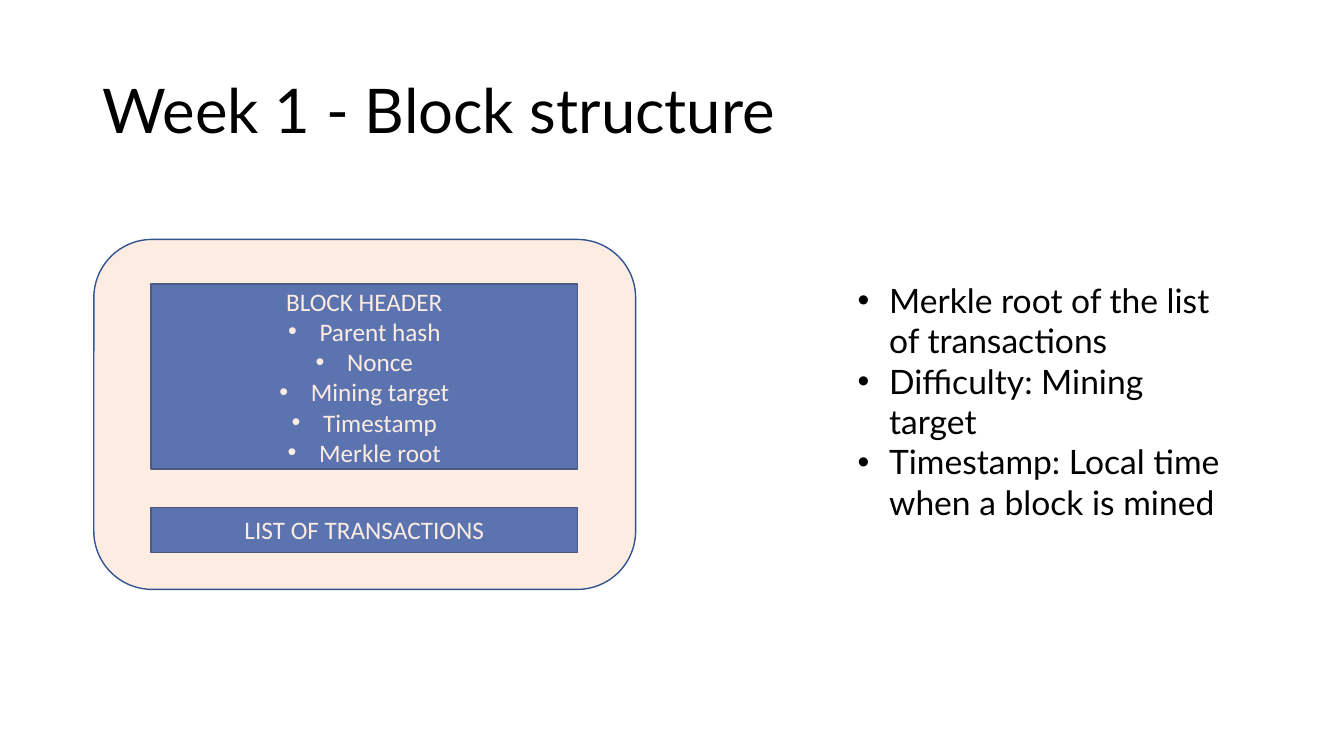
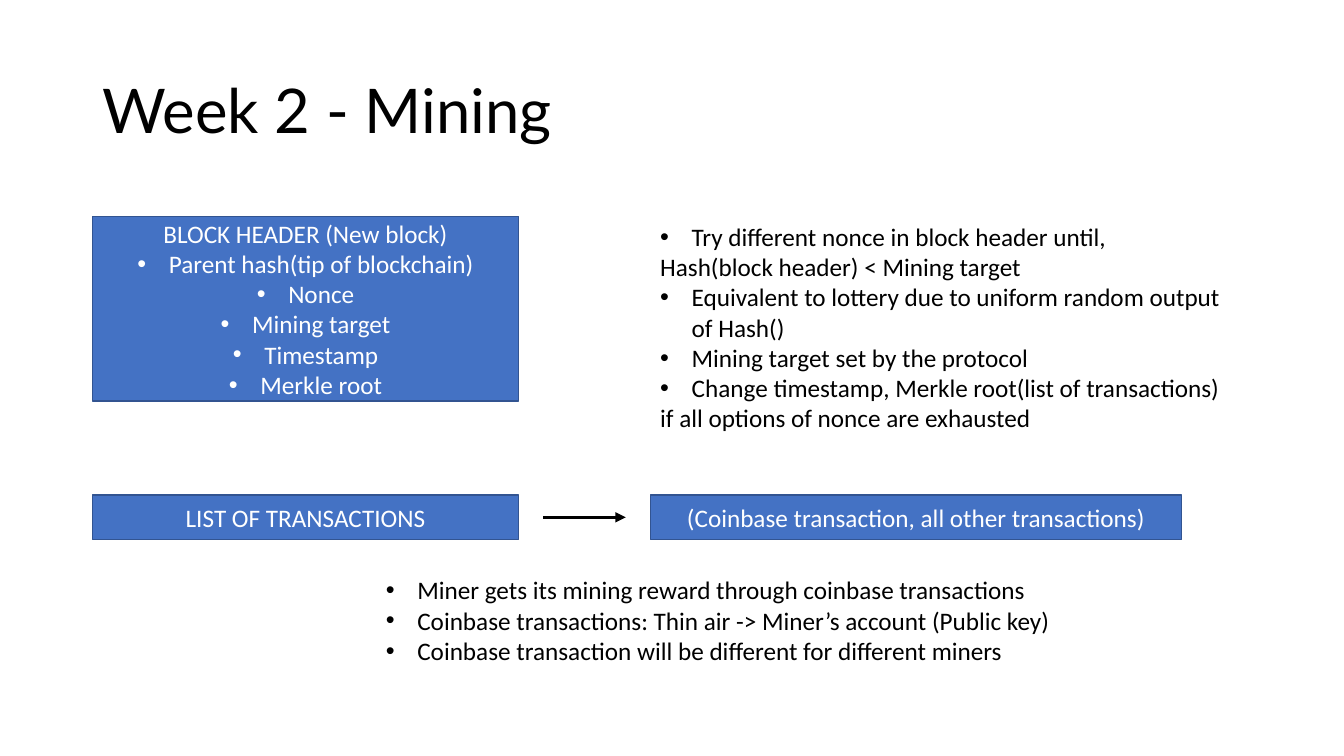
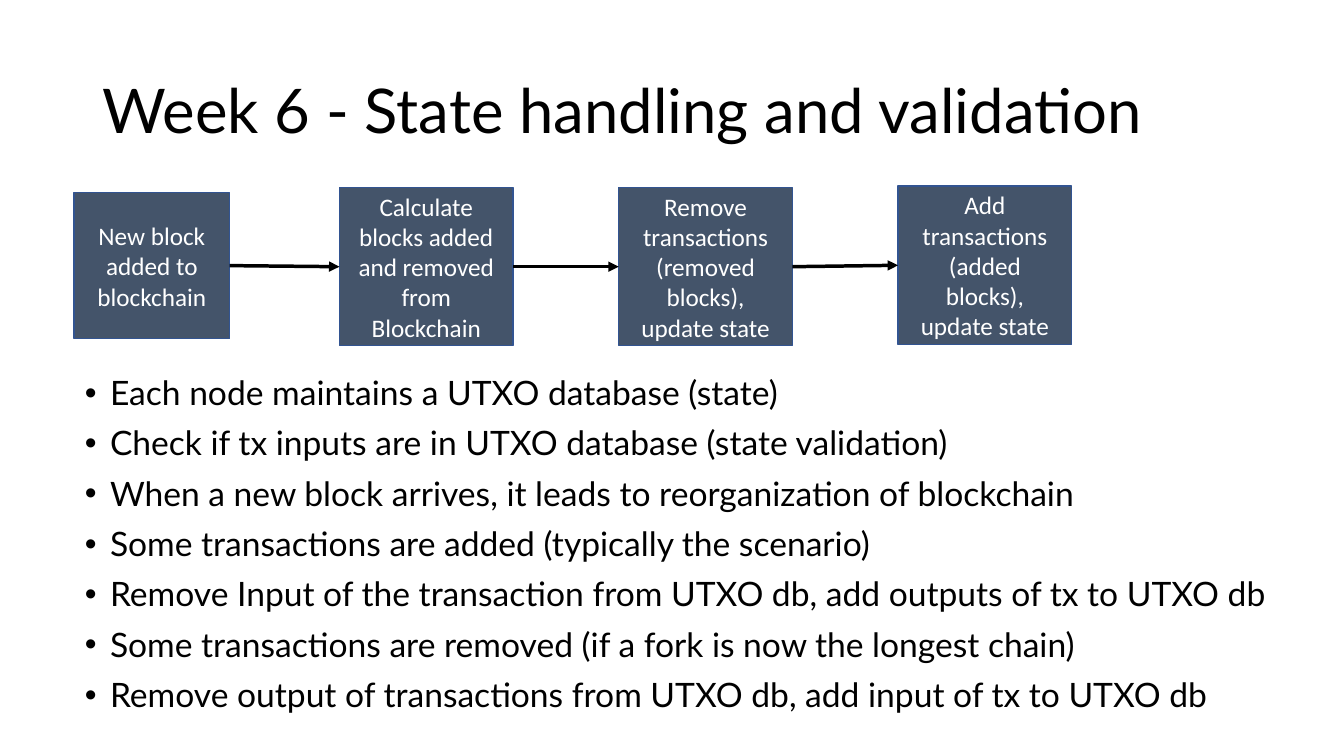
from dataclasses import dataclass
from lxml.etree import SubElement
from pptx import Presentation
from pptx.dml.color import RGBColor
from pptx.enum.shapes import MSO_CONNECTOR, MSO_SHAPE
from pptx.enum.text import MSO_ANCHOR, PP_ALIGN
from pptx.oxml.ns import qn
from pptx.util import Pt


@dataclass(frozen=True)
class Theme:
    blue: str = "4472C4"
    slate: str = "44546A"
    orange: str = "ED7D31"
    outline: str = "325491"
    white: str = "FFFFFF"
    black: str = "000000"
    heading_font: str = "Lato"
    body_font: str = "Calibri"
    title_size: float = 44
    large_size: float = 24
    small_size: float = 18


THEME = Theme()
BULLET = "• "
RIGHT_SIDE, LEFT_SIDE = 3, 1

TITLES = {
    "structure": "Week 1 - Block structure",
    "mining": "Week 2 - Mining",
    "state": "Week 6 - State handling and validation",
}
HEADER_FIELDS = ["• Nonce", "• Mining target", "• Timestamp", "• Merkle root"]
BLOCK_HEADER = ["BLOCK HEADER", "• Parent hash", *HEADER_FIELDS]
NEW_BLOCK_HEADER = ["BLOCK HEADER (New block)", "• Parent hash(tip of blockchain)", *HEADER_FIELDS]
TRANSACTIONS = ["LIST OF TRANSACTIONS"]
TRANSACTION_DETAIL = ["(Coinbase transaction, all other transactions)"]
FIELD_NOTES = [
    "• Merkle root of the list of transactions",
    "• Difficulty: Mining target",
    "• Timestamp: Local time when a block is mined",
]
MINING_NOTES = [
    "• Try different nonce in block header until,",
    "Hash(block header) < Mining target",
    "• Equivalent to lottery due to uniform random output of Hash()",
    "• Mining target set by the protocol",
    "• Change timestamp, Merkle root(list of transactions)",
    "if all options of nonce are exhausted",
]
REWARD_NOTES = [
    "• Miner gets its mining reward through coinbase transactions",
    "• Coinbase transactions: Thin air -> Miner’s account (Public key)",
    "• Coinbase transaction will be different for different miners",
]
FIRST_STEP = "New block added to blockchain"
NEXT_STEPS = [
    ("Calculate blocks added and removed from Blockchain", 134),
    ("Remove transactions (removed blocks), update state", 134),
    ("Add transactions (added blocks), update state", 133),
]
STATE_NOTES = [
    "• Each node maintains a UTXO database (state)",
    "• Check if tx inputs are in UTXO database (state validation)",
    "• When a new block arrives, it leads to reorganization of blockchain",
    "• Some transactions are added (typically the scenario)",
    "• Remove Input of the transaction from UTXO db, add outputs of tx to UTXO db",
    "• Some transactions are removed (if a fork is now the longest chain)",
    "• Remove output of transactions from UTXO db, add input of tx to UTXO db",
]

PANEL_WIDTH, HEADER_HEIGHT, ROW_HEIGHT = 304.5, 132, 32
MARGIN, RIGHT_COLUMN = 66, 464.5
STEP_WIDTH, STEP_HEIGHT, STEP_PITCH = 124, 113, 199.5


def write(shape, lines, size, color, font=THEME.body_font, align=PP_ALIGN.LEFT,
          anchor=MSO_ANCHOR.TOP, indent=22.5, spacing=None, before=None):
    frame = shape.text_frame
    frame.word_wrap = True
    frame.vertical_anchor = anchor
    frame.text = "\n".join(line.removeprefix(BULLET) for line in lines)
    for line, paragraph in zip(lines, frame.paragraphs):
        paragraph.alignment = align
        if line.startswith(BULLET):
            properties = paragraph._p.get_or_add_pPr()
            properties.set("marL", str(Pt(indent)))
            properties.set("indent", str(-Pt(indent)))
            SubElement(properties, qn("a:buFont"), typeface="Arial")
            SubElement(properties, qn("a:buChar"), char=BULLET.strip())
        if spacing:
            paragraph.line_spacing = spacing
        if before:
            paragraph.space_before = Pt(before)
        for run in paragraph.runs:
            run.font.name = font
            run.font.size = Pt(size)
            run.font.color.rgb = RGBColor.from_string(color)


def add_text(slide, box, lines, size, **style):
    shape = slide.shapes.add_textbox(*map(Pt, box))
    write(shape, lines, size, THEME.black, **style)


def add_panel(slide, box, fill, lines=(), kind=MSO_SHAPE.RECTANGLE, opacity=None):
    shape = slide.shapes.add_shape(kind, *map(Pt, box))
    shape.shadow.inherit = False
    shape.fill.solid()
    shape.fill.fore_color.rgb = RGBColor.from_string(fill)
    shape.line.color.rgb = RGBColor.from_string(THEME.outline)
    shape.line.width = Pt(1)
    if opacity:
        color = shape._element.spPr.find(".//" + qn("a:srgbClr"))
        SubElement(color, qn("a:alpha"), val=str(opacity * 1000))
    if lines:
        write(shape, lines, THEME.small_size, THEME.white,
              align=PP_ALIGN.CENTER, anchor=MSO_ANCHOR.MIDDLE)
    return shape


def add_arrow(slide, source, target, gap=0):
    start = source.left + source.width + Pt(gap), source.top + source.height // 2
    end = target.left - Pt(gap), target.top + target.height // 2
    arrow = slide.shapes.add_connector(MSO_CONNECTOR.STRAIGHT, *start, *end)
    if not gap:
        arrow.begin_connect(source, RIGHT_SIDE)
        arrow.end_connect(target, LEFT_SIDE)
    arrow.line.color.rgb = RGBColor.from_string(THEME.black)
    arrow.line.width = Pt(2.5)
    SubElement(arrow.line._get_or_add_ln(), qn("a:tailEnd"), type="triangle")
    SubElement(arrow._element.spPr, qn("a:effectLst"))


def add_slide(presentation, title):
    slide = presentation.slides.add_slide(presentation.slide_layouts[6])
    add_text(slide, (MARGIN, 29, 828, 104.5), [title], THEME.title_size,
             font=THEME.heading_font, anchor=MSO_ANCHOR.MIDDLE, spacing=0.9)
    return slide


def build_structure(presentation):
    slide = add_slide(presentation, TITLES["structure"])
    add_panel(slide, (108, 203, PANEL_WIDTH, HEADER_HEIGHT), THEME.blue, BLOCK_HEADER)
    add_panel(slide, (108, 362.5, PANEL_WIDTH, ROW_HEIGHT), THEME.blue, TRANSACTIONS)
    add_panel(slide, (67, 171, 387, 250), THEME.orange,
              kind=MSO_SHAPE.ROUNDED_RECTANGLE, opacity=14)
    add_text(slide, (605.5, 196.5, 281.5, 152.5), FIELD_NOTES, THEME.large_size,
             font=THEME.heading_font)


def build_mining(presentation):
    slide = add_slide(presentation, TITLES["mining"])
    row_top = 353.5
    add_panel(slide, (MARGIN, 154.5, PANEL_WIDTH, HEADER_HEIGHT), THEME.blue, NEW_BLOCK_HEADER)
    add_text(slide, (RIGHT_COLUMN, 154.5, 429, 160), MINING_NOTES, THEME.small_size)
    transactions = add_panel(slide, (MARGIN, row_top, PANEL_WIDTH, ROW_HEIGHT),
                             THEME.blue, TRANSACTIONS)
    detail = add_panel(slide, (RIGHT_COLUMN, row_top, 379.5, ROW_HEIGHT),
                       THEME.blue, TRANSACTION_DETAIL)
    add_arrow(slide, transactions, detail, gap=17.5)
    add_text(slide, (268.5, 407, 494.5, 72.5), REWARD_NOTES, THEME.small_size)


def build_state(presentation):
    slide = add_slide(presentation, TITLES["state"])
    previous = add_panel(slide, (53, 137.5, 111, 104.5), THEME.slate, [FIRST_STEP])
    for index, (step, top) in enumerate(NEXT_STEPS):
        box = (242.5 + index * STEP_PITCH, top, STEP_WIDTH, STEP_HEIGHT)
        current = add_panel(slide, box, THEME.slate, [step])
        add_arrow(slide, previous, current)
        previous = current
    add_text(slide, (53.5, 265.5, 890.5, 245.5), STATE_NOTES, THEME.large_size,
             font=THEME.heading_font, indent=18, spacing=0.9, before=10)


def main():
    presentation = Presentation()
    presentation.slide_width, presentation.slide_height = Pt(960), Pt(540)
    for build in (build_structure, build_mining, build_state):
        build(presentation)
    presentation.save("out.pptx")


if __name__ == "__main__":
    main()
